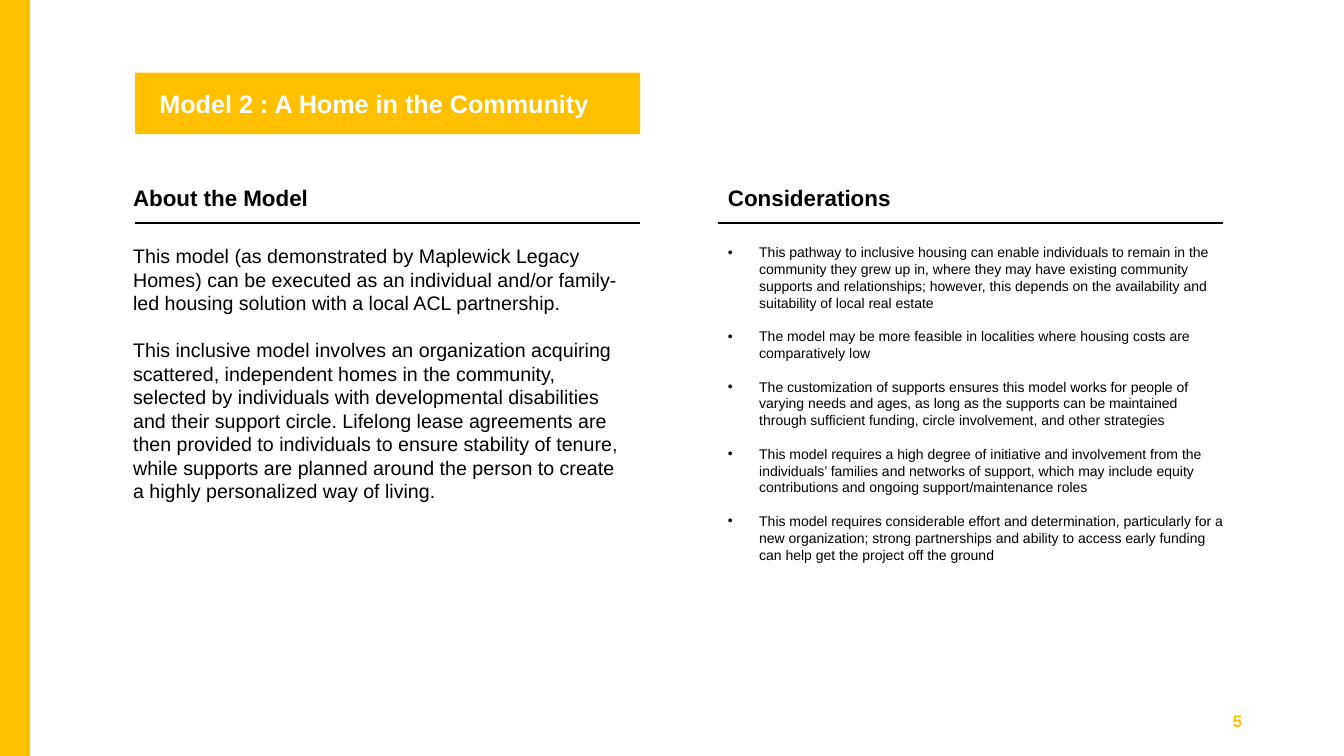
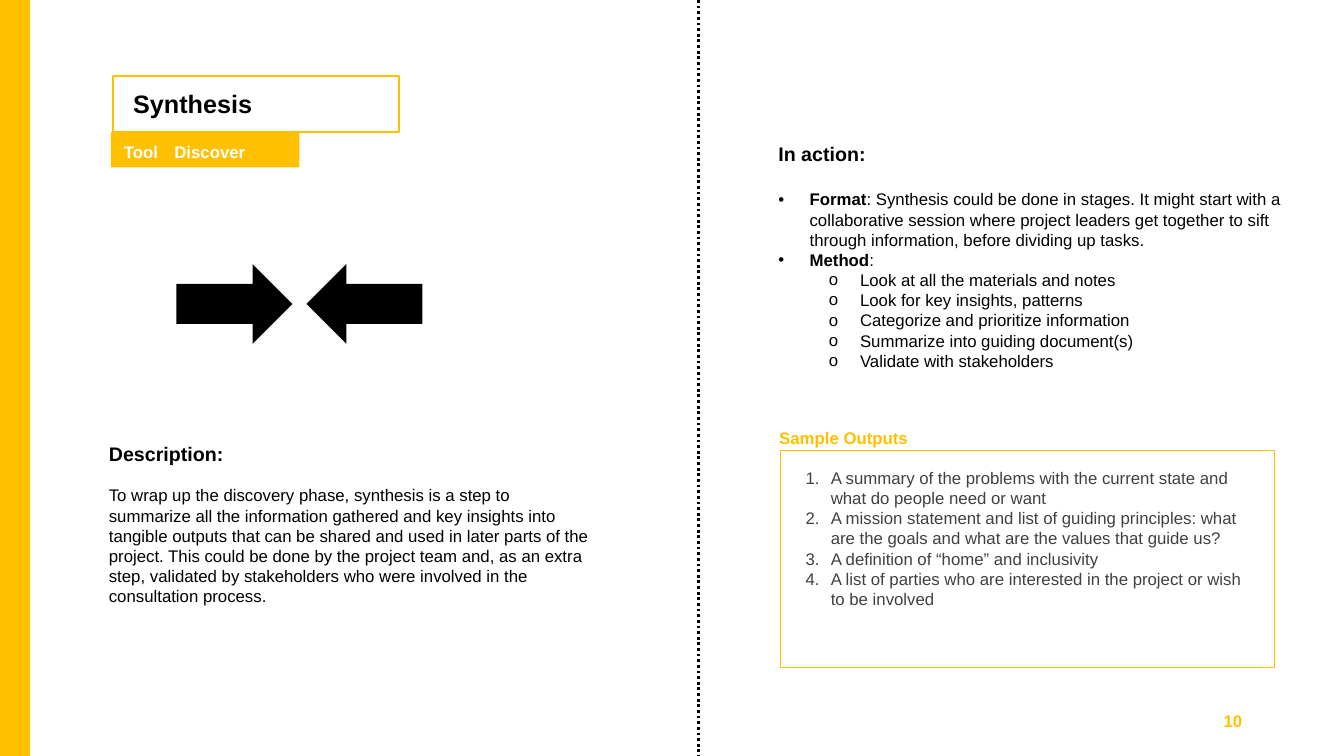
from lxml.etree import SubElement
from pptx import Presentation
from pptx.dml.color import RGBColor
from pptx.enum.dml import MSO_LINE
from pptx.enum.shapes import MSO_CONNECTOR, MSO_SHAPE
from pptx.enum.text import MSO_ANCHOR, MSO_AUTO_SIZE, PP_ALIGN
from pptx.oxml.ns import qn
from pptx.util import Inches, Pt

YELLOW = RGBColor(0xFF, 0xC0, 0x00)
BLACK = RGBColor(0, 0, 0)
WHITE = RGBColor(0xFF, 0xFF, 0xFF)
GRAY = RGBColor(0x40, 0x40, 0x40)
FONT = "Arial"
LINE_HEIGHT = 1.2
SLIDE_WIDTH, SLIDE_HEIGHT = 13.33, 7.5
TWO_CONTENT, COMPARISON = 3, 4

ABOUT = [
    "This model (as demonstrated by Maplewick Legacy Homes) can be executed as an "
    "individual and/or family-led housing solution with a local ACL partnership.",
    "This inclusive model involves an organization acquiring scattered, independent "
    "homes in the community, selected by individuals with developmental disabilities "
    "and their support circle. Lifelong lease agreements are then provided to "
    "individuals to ensure stability of tenure, while supports are planned around the "
    "person to create a highly personalized way of living.",
]
CONSIDERATIONS = [
    "This pathway to inclusive housing can enable individuals to remain in the "
    "community they grew up in, where they may have existing community supports and "
    "relationships; however, this depends on the availability and suitability of local "
    "real estate",
    "The model may be more feasible in localities where housing costs are comparatively "
    "low",
    "The customization of supports ensures this model works for people of varying needs "
    "and ages, as long as the supports can be maintained through sufficient funding, "
    "circle involvement, and other strategies",
    "This model requires a high degree of initiative and involvement from the "
    "individuals’ families and networks of support, which may include equity "
    "contributions and ongoing support/maintenance roles",
    "This model requires considerable effort and determination, particularly for a new "
    "organization; strong partnerships and ability to access early funding can help get "
    "the project off the ground",
]
DESCRIPTION = (
    "To wrap up the discovery phase, synthesis is a step to summarize all the "
    "information gathered and key insights into tangible outputs that can be shared and "
    "used in later parts of the project. This could be done by the project team and, as "
    "an extra step, validated by stakeholders who were involved in the consultation "
    "process."
)
PRACTICES = [
    ("Format", ": Synthesis could be done in stages. It might start with a collaborative "
     "session where project leaders get together to sift through information, before "
     "dividing up tasks."),
    ("Method", ":"),
]
METHOD_STEPS = [
    "Look at all the materials and notes",
    "Look for key insights, patterns",
    "Categorize and prioritize information",
    "Summarize into guiding document(s)",
    "Validate with stakeholders",
]
SAMPLE_OUTPUTS = [
    "A summary of the problems with the current state and what do people need or want",
    "A mission statement and list of guiding principles: what are the goals and what are "
    "the values that guide us?",
    "A definition of “home” and inclusivity",
    "A list of parties who are interested in the project or wish to be involved",
]


def prepare_frame(shape, margins=(0.1, 0.05, 0.1, 0.05), anchor=MSO_ANCHOR.TOP):
    """Fix wrapping, anchor and margins (left, top, right, bottom)."""
    frame = shape.text_frame
    frame.auto_size = MSO_AUTO_SIZE.NONE
    frame.word_wrap = True
    frame.vertical_anchor = anchor
    (frame.margin_left, frame.margin_top,
     frame.margin_right, frame.margin_bottom) = map(Inches, margins)
    return frame


def set_bullet(paragraph, bullet, left, hanging):
    """Set a bullet character, "1." for automatic numbers, or None."""
    properties = paragraph._p.get_or_add_pPr()
    properties.set("marL", str(Inches(left)))
    properties.set("indent", str(-Inches(hanging)))
    if bullet is None:
        SubElement(properties, qn("a:buNone"))
        return
    SubElement(properties, qn("a:buFont"), typeface=FONT)
    if bullet == "1.":
        SubElement(properties, qn("a:buAutoNum"), type="arabicPeriod")
    else:
        SubElement(properties, qn("a:buChar"), char=bullet)


def add_paragraph(frame, text, size, color=BLACK, bold=False, lead="", bullet=None,
                  left=0, hanging=0, level=0, gap=0, align=PP_ALIGN.LEFT):
    """Write a paragraph, with an optional bold lead and a gap after it in points."""
    paragraph = frame.paragraphs[0] if not frame.text else frame.add_paragraph()
    paragraph.level = level
    paragraph.alignment = align
    paragraph.line_spacing = Pt(size * LINE_HEIGHT)
    paragraph.space_before = Pt(0)
    paragraph.space_after = Pt(gap)
    set_bullet(paragraph, bullet, left, hanging)
    for part, is_bold in ((lead, True), (text, bold)):
        if part:
            run = paragraph.add_run()
            run.text = part
            run.font.name = FONT
            run.font.size = Pt(size)
            run.font.bold = is_bold
            run.font.color.rgb = color
    return paragraph


def add_paragraphs(frame, texts, size, gap=0, **style):
    for number, text in enumerate(texts, 1):
        add_paragraph(frame, text, size, gap=gap if number < len(texts) else 0, **style)


def place(shape, left, top, width, height):
    shape.left, shape.top = Inches(left), Inches(top)
    shape.width, shape.height = Inches(width), Inches(height)
    return shape


def paint(shape, fill=None, line=None, line_width=1.0):
    if fill is None:
        shape.fill.background()
    else:
        shape.fill.solid()
        shape.fill.fore_color.rgb = fill
    if line is None:
        shape.line.fill.background()
    else:
        shape.line.color.rgb = line
        shape.line.width = Pt(line_width)


def add_block(slide, kind, box, **colors):
    shape = slide.shapes.add_shape(kind, *map(Inches, box))
    shape.shadow.inherit = False
    paint(shape, **colors)
    return shape


def add_line(slide, start, end, width, dash=None):
    line = slide.shapes.add_connector(MSO_CONNECTOR.STRAIGHT, *map(Inches, start + end))
    line.line.color.rgb = BLACK
    line.line.width = Pt(width)
    if dash:
        line.line.dash_style = dash
    SubElement(line._element.spPr, qn("a:effectLst"))


def placeholder_frame(slide, index, *box):
    return prepare_frame(place(slide.placeholders[index], *box))


def add_textbox(slide, box, text, anchor=MSO_ANCHOR.TOP, **style):
    shape = slide.shapes.add_textbox(*map(Inches, box))
    add_paragraph(prepare_frame(shape, anchor=anchor), text, **style)


def set_title(slide, text, box, inset, color, **colors):
    title = place(slide.shapes.title, *box)
    paint(title, **colors)
    frame = prepare_frame(title, (inset, 0.05, 0.05, 0.05), MSO_ANCHOR.MIDDLE)
    add_paragraph(frame, text, 18, color, bold=True)


def start_slide(presentation, layout, page):
    """Add a slide with the side band and page number that all slides share."""
    slide = presentation.slides.add_slide(presentation.slide_layouts[layout])
    add_block(slide, MSO_SHAPE.RECTANGLE, (0, 0, 0.3, SLIDE_HEIGHT), fill=YELLOW)
    add_textbox(slide, (9.42, 6.95, 3, 0.4), page, MSO_ANCHOR.MIDDLE,
                size=12, color=YELLOW, bold=True, align=PP_ALIGN.RIGHT)
    return slide


def add_model_column(slide, first_index, heading, text_left, rule_left):
    """Fill a column heading, rule it off, and return the frame below."""
    frame = placeholder_frame(slide, first_index, text_left, 1.78, 3.25, 0.4)
    add_paragraph(frame, heading, 16, bold=True)
    add_line(slide, (rule_left, 2.21), (rule_left + 5.01, 2.21), 1.75)
    return placeholder_frame(slide, first_index + 1, text_left, 2.37, 5.13, 3.64)


def build_model_slide(presentation):
    slide = start_slide(presentation, COMPARISON, "5")
    set_title(slide, "Model 2 : A Home in the Community", (1.34, 0.72, 5.01, 0.61),
              0.24, WHITE, fill=YELLOW)
    about = add_model_column(slide, 1, "About the Model", 1.22, 1.34)
    add_paragraphs(about, ABOUT, 14, gap=14 * LINE_HEIGHT)
    considerations = add_model_column(slide, 3, "Considerations", 7.12, 7.12)
    add_paragraphs(considerations, CONSIDERATIONS, 10, gap=10 * LINE_HEIGHT,
                   bullet="•", left=0.31, hanging=0.31)


def add_tool_tag(slide):
    tag = add_block(slide, MSO_SHAPE.RECTANGLE, (1.1, 1.31, 1.87, 0.35), fill=YELLOW)
    frame = prepare_frame(tag, (0.13, 0.04, 0, 0), MSO_ANCHOR.MIDDLE)
    paragraph = add_paragraph(frame, "Tool\tDiscover", 12, WHITE, bold=True)
    tabs = SubElement(paragraph._p.get_or_add_pPr(), qn("a:tabLst"))
    SubElement(tabs, qn("a:tab"), pos=str(Inches(0.84)), algn="l")


def add_sample_outputs(slide):
    add_textbox(slide, (7.63, 4.19, 5, 0.3), "Sample Outputs",
                size=12, color=YELLOW, bold=True)
    box = add_block(slide, MSO_SHAPE.RECTANGLE, (7.74, 4.47, 4.9, 2.15), line=YELLOW)
    frame = prepare_frame(box, (0.25, 0.17, 0.32, 0.05))
    add_paragraphs(frame, SAMPLE_OUTPUTS, 12, color=GRAY,
                   bullet="1.", left=0.25, hanging=0.25)


def build_synthesis_slide(presentation):
    slide = start_slide(presentation, TWO_CONTENT, "10")
    set_title(slide, "Synthesis", (1.12, 0.75, 2.84, 0.56), 0.2, BLACK,
              fill=WHITE, line=YELLOW, line_width=1.5)
    add_tool_tag(slide)
    add_line(slide, (6.93, 0), (6.93, SLIDE_HEIGHT), 2, MSO_LINE.ROUND_DOT)
    for kind, left in ((MSO_SHAPE.RIGHT_ARROW, 1.75), (MSO_SHAPE.LEFT_ARROW, 3.04)):
        add_block(slide, kind, (left, 2.62, 1.15, 0.79), fill=BLACK)

    description = placeholder_frame(slide, 1, 0.98, 4.33, 5.04, 1.99)
    add_paragraph(description, "Description:", 14, bold=True, gap=12 * LINE_HEIGHT)
    add_paragraph(description, DESCRIPTION, 12)

    action = placeholder_frame(slide, 2, 7.62, 1.36, 5.22, 2.7)
    add_paragraph(action, "In action:", 14, bold=True, gap=14 * LINE_HEIGHT)
    for lead, text in PRACTICES:
        add_paragraph(action, text, 12, lead=lead, bullet="•", left=0.31, hanging=0.31)
    add_paragraphs(action, METHOD_STEPS, 12, bullet="o", left=0.81, hanging=0.31, level=1)
    add_sample_outputs(slide)


def main():
    presentation = Presentation()
    presentation.slide_width = Inches(SLIDE_WIDTH)
    presentation.slide_height = Inches(SLIDE_HEIGHT)
    build_model_slide(presentation)
    build_synthesis_slide(presentation)
    presentation.save("out.pptx")


if __name__ == "__main__":
    main()
